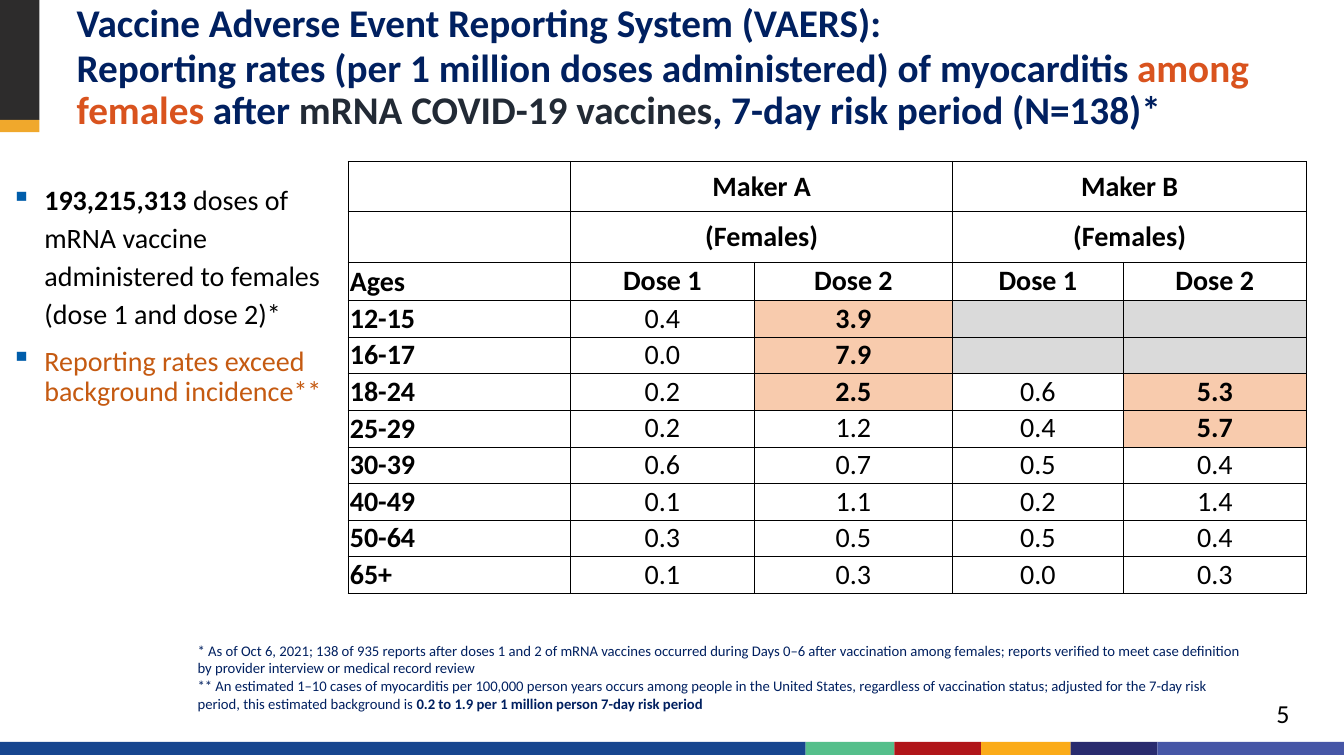
import itertools
from dataclasses import dataclass

import pptx
import pptx.dml.color
import pptx.enum.shapes
import pptx.enum.text
import pptx.oxml
import pptx.oxml.ns
import pptx.util

Inches = pptx.util.Inches
Pt = pptx.util.Pt
CENTER = pptx.enum.text.PP_ALIGN.CENTER


@dataclass(frozen=True)
class Theme:
    font: str = "Calibri"
    navy: str = "002060"
    slate: str = "222A35"
    black: str = "000000"
    orange: str = "D9531E"
    rust: str = "C55A11"
    bullet: str = "005DAA"
    raised: str = "F8CBAD"
    no_data: str = "DADADA"
    charcoal: str = "2D2C2C"
    gold: str = "F0A82C"
    strip: tuple = ("17468F", "55BF8B", "B01519", "FBAB18", "292B6E", "4656A6")
    title_size: float = 28
    body_size: float = 20
    number_size: float = 18.5
    note_size: float = 10.5


THEME = Theme()
STRIP_EDGES = (0, 7.99, 8.87, 9.73, 10.62, 11.48, 13.33)
COLUMN_WIDTHS = (2.21, 1.82, 1.97, 1.69, 1.82)
HEADER_HEIGHTS = (0.5, 0.5, 0.38)
TABLE_HEIGHT = 4.29
RATES = (
    ("12-15", "0.4", "3.9", "", ""),
    ("16-17", "0.0", "7.9", "", ""),
    ("18-24", "0.2", "2.5", "0.6", "5.3"),
    ("25-29", "0.2", "1.2", "0.4", "5.7"),
    ("30-39", "0.6", "0.7", "0.5", "0.4"),
    ("40-49", "0.1", "1.1", "0.2", "1.4"),
    ("50-64", "0.3", "0.5", "0.5", "0.4"),
    ("65+", "0.1", "0.3", "0.0", "0.3"),
)
RAISED_FROM = 2.5


def rgb(color):
    return pptx.dml.color.RGBColor.from_string(color)


def add_block(slide, left, top, width, height, color):
    block = slide.shapes.add_shape(
        pptx.enum.shapes.MSO_SHAPE.RECTANGLE,
        Inches(left), Inches(top), Inches(width), Inches(height))
    block.shadow.inherit = False
    block.fill.solid()
    block.fill.fore_color.rgb = rgb(color)
    block.line.fill.background()


def add_text_area(slide, left, top, width, height, wrap=True):
    frame = slide.shapes.add_textbox(
        Inches(left), Inches(top), Inches(width), Inches(height)).text_frame
    frame.word_wrap = wrap
    frame.margin_left = frame.margin_right = frame.margin_bottom = 0
    frame.margin_top = Inches(0.01)
    return frame


def add_run(paragraph, text, size, color, bold=False):
    run = paragraph.add_run()
    run.text = text
    run.font.name = THEME.font
    run.font.size = Pt(size)
    run.font.bold = bold
    run.font.color.rgb = rgb(color)


def add_bullet(paragraph):
    properties = paragraph._p.get_or_add_pPr()
    properties.set("marL", str(Inches(0.35)))
    properties.set("indent", str(Inches(-0.33)))
    namespace = pptx.oxml.ns.nsdecls("a")
    for xml in (
        f'<a:buClr {namespace}><a:srgbClr val="{THEME.bullet}"/></a:buClr>',
        f'<a:buChar {namespace} char="▪"/>',
    ):
        properties.append(pptx.oxml.parse_xml(xml))


def add_borders(cell):
    properties = cell._tc.get_or_add_tcPr()
    namespace = pptx.oxml.ns.nsdecls("a")
    for side in "LRTB":
        properties.append(pptx.oxml.parse_xml(
            f'<a:ln{side} {namespace} w="{Pt(0.5)}"><a:solidFill>'
            f'<a:srgbClr val="{THEME.black}"/></a:solidFill></a:ln{side}>'))


def style_cell(cell, text="", top=0.0, bold=False, fill=None, centered=True):
    cell.margin_left = Inches(0 if centered else 0.02)
    cell.margin_right = cell.margin_bottom = 0
    cell.margin_top = Inches(top)
    add_borders(cell)
    if fill:
        cell.fill.solid()
        cell.fill.fore_color.rgb = rgb(fill)
    else:
        cell.fill.background()
    paragraph = cell.text_frame.paragraphs[0]
    if centered:
        paragraph.alignment = CENTER
    else:
        paragraph.line_spacing = Pt(23.8)
    if text:
        add_run(paragraph, text, THEME.body_size, THEME.black, bold)


def add_branding(slide):
    for (left, right), color in zip(itertools.pairwise(STRIP_EDGES), THEME.strip):
        add_block(slide, left, 7.36, right - left, 0.13, color)
    add_block(slide, 0, 0, 0.39, 1.19, THEME.charcoal)
    add_block(slide, 0, 1.19, 0.39, 0.12, THEME.gold)


def add_title(slide):
    frame = add_text_area(slide, 0.76, 0, 11.7, 1.33)
    system = frame.paragraphs[0]
    system.line_spacing = Pt(31.6)
    add_run(system, "Vaccine Adverse Event Reporting System (VAERS):",
            THEME.title_size, THEME.navy, True)
    subject = frame.add_paragraph()
    subject.line_spacing = Pt(30.4)
    subject.space_before = Pt(1.6)
    for text, color in (
        ("Reporting rates (per 1 million doses administered) of myocarditis ", THEME.navy),
        ("among females ", THEME.orange),
        ("after ", THEME.navy),
        ("mRNA COVID-19 vaccines", THEME.slate),
        (", 7-day risk period (N=138)*", THEME.navy),
    ):
        add_run(subject, text, THEME.title_size, color, True)


def add_findings(slide):
    frame = add_text_area(slide, 0.09, 1.76, 3.2, 2.29)
    doses = frame.paragraphs[0]
    add_bullet(doses)
    doses.line_spacing = 1.13
    add_run(doses, "193,215,313 ", THEME.body_size, THEME.black, True)
    add_run(doses, "doses of mRNA vaccine administered to females (dose 1 and dose 2)*",
            THEME.body_size, THEME.black)
    incidence = frame.add_paragraph()
    add_bullet(incidence)
    incidence.line_spacing = Pt(21.6)
    incidence.space_before = Pt(11.5)
    add_run(incidence, "Reporting rates exceed background incidence**",
            THEME.body_size, THEME.rust)


def add_rates_table(slide):
    row_count = len(HEADER_HEIGHTS) + len(RATES)
    table = slide.shapes.add_table(
        row_count, len(COLUMN_WIDTHS), Inches(3.45), Inches(1.6),
        Inches(sum(COLUMN_WIDTHS)), Inches(TABLE_HEIGHT)).table
    table.first_row = table.horz_banding = False
    for column, width in zip(table.columns, COLUMN_WIDTHS):
        column.width = Inches(width)
    age_height = (TABLE_HEIGHT - sum(HEADER_HEIGHTS)) / len(RATES)
    for row, height in zip(table.rows, HEADER_HEIGHTS + (age_height,) * len(RATES)):
        row.height = Inches(height)

    for row, labels in enumerate((("", "Maker A", "", "Maker B", ""),
                                  ("", "(Females)", "", "(Females)", ""))):
        for first in (1, 3):
            table.cell(row, first).merge(table.cell(row, first + 1))
        for column, label in enumerate(labels):
            style_cell(table.cell(row, column), label, 0.08, True)

    style_cell(table.cell(2, 0), "Ages", 0.04, True, centered=False)
    for column in range(1, 5):
        style_cell(table.cell(2, column), f"Dose {2 - column % 2}", 0.02, True)

    for row, (ages, *rates) in enumerate(RATES, len(HEADER_HEIGHTS)):
        style_cell(table.cell(row, 0), ages, 0.02, True, centered=False)
        for column, rate in enumerate(rates, 1):
            raised = bool(rate) and float(rate) >= RAISED_FROM
            fill = THEME.raised if raised else None if rate else THEME.no_data
            style_cell(table.cell(row, column), rate, 0.01, raised, fill)


def add_footnotes(slide):
    frame = add_text_area(slide, 1.96, 6.35, 10.35, 0.73)
    reports = frame.paragraphs[0]
    background = frame.add_paragraph()
    reports.line_spacing = background.line_spacing = 1.02
    for paragraph, text, bold in (
        (reports, "* As of Oct 6, 2021; 138 of 935 reports after doses 1 and 2 of mRNA "
         "vaccines occurred during Days 0–6 after vaccination among females; reports "
         "verified to meet case definition by provider interview or medical record review", False),
        (background, "** An estimated 1–10 cases of myocarditis per 100,000 person years "
         "occurs among people in the United States, regardless of vaccination status; "
         "adjusted for the 7-day risk period, this estimated background is ", False),
        (background, "0.2 to 1.9 per 1 million person 7-day risk period", True),
    ):
        add_run(paragraph, text, THEME.note_size, THEME.navy, bold)


def add_slide_number(slide):
    frame = add_text_area(slide, 12.66, 6.91, 0.16, 0.33, wrap=False)
    add_run(frame.paragraphs[0], "5", THEME.number_size, THEME.black)


def main():
    deck = pptx.Presentation()
    deck.slide_width, deck.slide_height = Inches(13.33), Inches(7.5)
    slide = deck.slides.add_slide(deck.slide_layouts[6])
    add_branding(slide)
    add_title(slide)
    add_slide_number(slide)
    add_findings(slide)
    add_rates_table(slide)
    add_footnotes(slide)
    deck.save("out.pptx")


if __name__ == "__main__":
    main()
